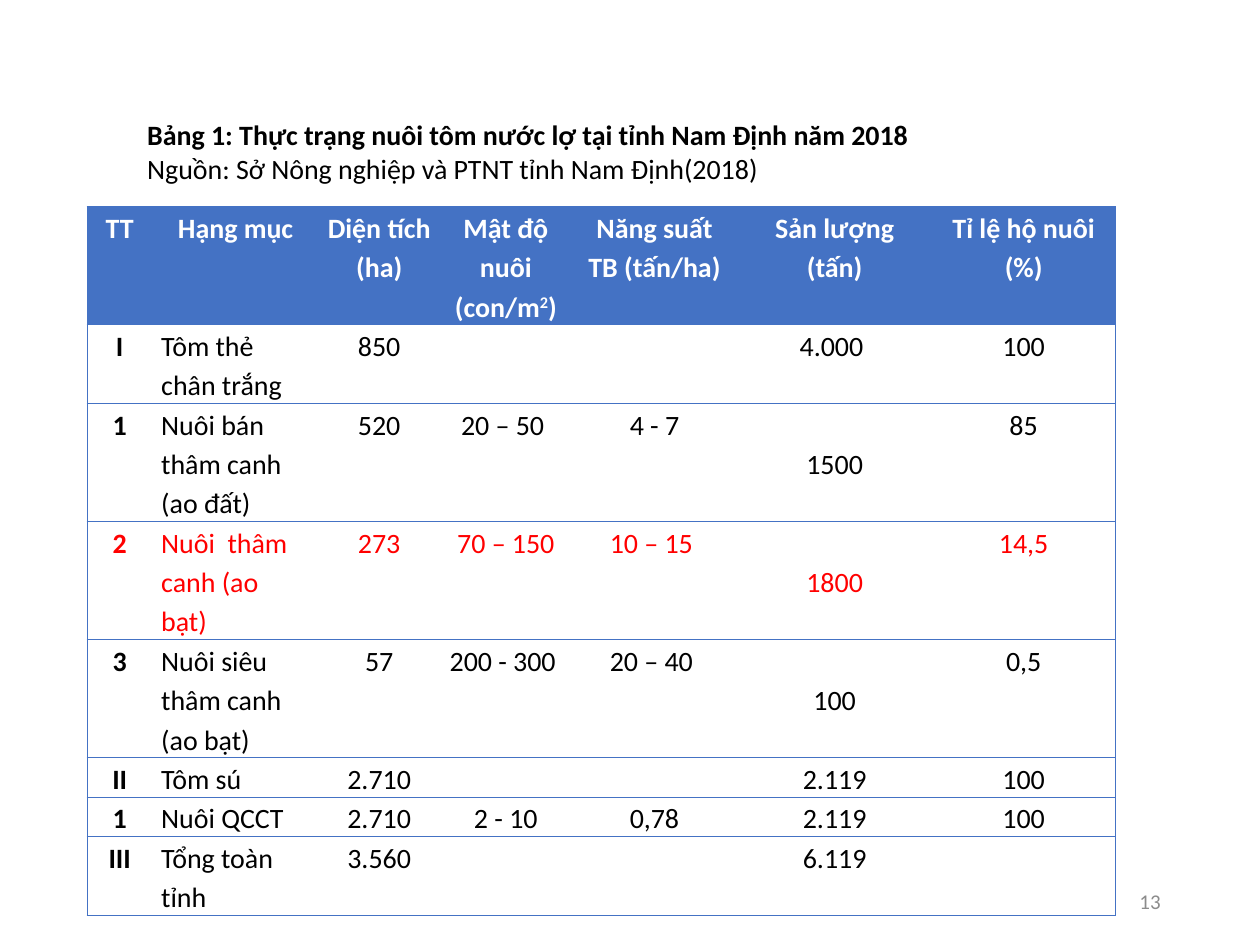
"""Build a slide with a table on brackish-water shrimp farming in Nam Định."""
import pptx
import pptx.dml.color
import pptx.enum.text
import pptx.oxml
import pptx.oxml.ns
import pptx.util

Inches = pptx.util.Inches
Pt = pptx.util.Pt
RGBColor = pptx.dml.color.RGBColor
ALIGN = pptx.enum.text.PP_ALIGN
ANCHOR = pptx.enum.text.MSO_ANCHOR

BLUE = RGBColor(0x44, 0x72, 0xC4)
WHITE = RGBColor(0xFF, 0xFF, 0xFF)
BLACK = RGBColor(0, 0, 0)
RED = RGBColor(0xFF, 0, 0)
GRAY = RGBColor(0x8C, 0x8C, 0x8C)
PLAIN_STYLE = "{2D5ABB26-0587-4C30-8999-92F81FD0307C}"

COLUMN_WIDTHS = [0.52, 1.32, 0.96, 1.05, 1.31, 1.55, 1.45]
LINE_HEIGHT = 0.31
LINES_PER_ROW = [3, 2, 3, 3, 3, 1, 1, 2]
NAME_COLUMN, OUTPUT_COLUMN = 1, 5
RED_ROW = 3
MIDDLE_ROWS = (2, 3, 4)
ROWS = [
    ["TT", "Hạng mục", "Diện tích (ha)", "Mật độ nuôi (con/m^2^)",
     "Năng suất TB (tấn/ha)", "Sản lượng (tấn)", "Tỉ lệ hộ nuôi (%)"],
    ["I", "Tôm thẻ chân trắng", "850", "", "", "4.000 ", "100"],
    ["1", "Nuôi bán thâm canh (ao đất)", "520", "20 – 50 ", "4 - 7", "1500", "85"],
    ["2", "Nuôi  thâm canh (ao bạt)", "273", "70 – 150", "10 – 15 ", "1800", "14,5"],
    ["3", "Nuôi siêu thâm canh (ao bạt)", "57", "200 - 300 ", "20 – 40 ", "100", "0,5"],
    ["II", "Tôm sú", "2.710", "", "", "2.119", "100"],
    ["1", "Nuôi QCCT", "2.710", "2 - 10", "0,78", "2.119", "100"],
    ["III", "Tổng toàn tỉnh", "3.560", "", "", "6.119", ""],
]


def add_text(paragraph, text, size, color, bold, **paragraph_format):
    for key, value in paragraph_format.items():
        setattr(paragraph, key, value)
    for index, part in enumerate(text.split("^")):
        run = paragraph.add_run()
        run.text = part
        for key, value in {"name": "Calibri", "size": Pt(size), "bold": bold}.items():
            setattr(run.font, key, value)
        run.font.color.rgb = color
        if index % 2:
            run.font._element.set("baseline", "30000")


def add_borders(cell, sides):
    for position, side in enumerate(sides):
        border = pptx.oxml.parse_xml(
            f'<a:ln{side} {pptx.oxml.ns.nsdecls("a")} w="{Pt(0.5)}">'
            f'<a:solidFill><a:srgbClr val="{BLUE}"/></a:solidFill></a:ln{side}>')
        cell._tc.get_or_add_tcPr().insert(position, border)


deck = pptx.Presentation()
deck.slide_width, deck.slide_height = Inches(10), Inches(7.5)
slide = deck.slides.add_slide(deck.slide_layouts[6])

farming_frame = slide.shapes.add_table(
    len(ROWS), len(COLUMN_WIDTHS), Inches(0.69), Inches(1.64),
    Inches(sum(COLUMN_WIDTHS)), Inches(LINE_HEIGHT * sum(LINES_PER_ROW)))
farming = farming_frame.table
farming.horz_banding = False
farming._tbl.tblPr.find(pptx.oxml.ns.qn("a:tableStyleId")).text = PLAIN_STYLE
for column, width in zip(farming.columns, COLUMN_WIDTHS):
    column.width = Inches(width)
for row, lines in zip(farming.rows, LINES_PER_ROW):
    row.height = Inches(LINE_HEIGHT * lines)

cell_format = {"margin_left": Inches(0.07), "margin_right": Inches(0.07),
               "margin_top": 0, "margin_bottom": 0}
for r, values in enumerate(ROWS):
    color = WHITE if r == 0 else RED if r == RED_ROW else BLACK
    for c, value in enumerate(values):
        cell = farming.cell(r, c)
        for key, setting in cell_format.items():
            setattr(cell, key, setting)
        if c == OUTPUT_COLUMN and r in MIDDLE_ROWS:
            cell.vertical_anchor = ANCHOR.MIDDLE
        if r == 0:
            cell.fill.solid()
            cell.fill.fore_color.rgb = BLUE
        else:
            cell.fill.background()
        left = "L" if c == 0 else ""
        right = "R" if c == len(values) - 1 else ""
        add_borders(cell, left + right + "TB")
        if value:
            add_text(cell.text_frame.paragraphs[0], value, 16, color, r == 0 or c == 0,
                     alignment=ALIGN.LEFT if r and c == NAME_COLUMN else ALIGN.CENTER,
                     line_spacing=1.15, space_after=Pt(5))

page_number = slide.shapes.add_textbox(
    Inches(7.06), Inches(6.95), Inches(2.25), Inches(0.4)).text_frame
caption = slide.shapes.add_textbox(
    Inches(0.69), Inches(0.88), Inches(7.87), Inches(0.64)).text_frame
for frame in (page_number, caption):
    frame.word_wrap = True
    frame.vertical_anchor = ANCHOR.MIDDLE

add_text(page_number.paragraphs[0], "13", 12, GRAY, False, alignment=ALIGN.RIGHT)

caption.auto_size = pptx.enum.text.MSO_AUTO_SIZE.SHAPE_TO_FIT_TEXT
title, source = caption.paragraphs[0], caption.add_paragraph()
add_text(title, "Bảng 1: Thực trạng nuôi tôm nước lợ tại tỉnh Nam Định năm 2018 ",
         16, BLACK, True, alignment=ALIGN.JUSTIFY)
add_text(source, "Nguồn: Sở Nông nghiệp và PTNT tỉnh Nam Định(2018)",
         16, BLACK, False, alignment=ALIGN.JUSTIFY)
for paragraph in (title, source):
    paragraph._p.get_or_add_pPr().set("indent", str(Inches(0.38)))

deck.save("out.pptx")
